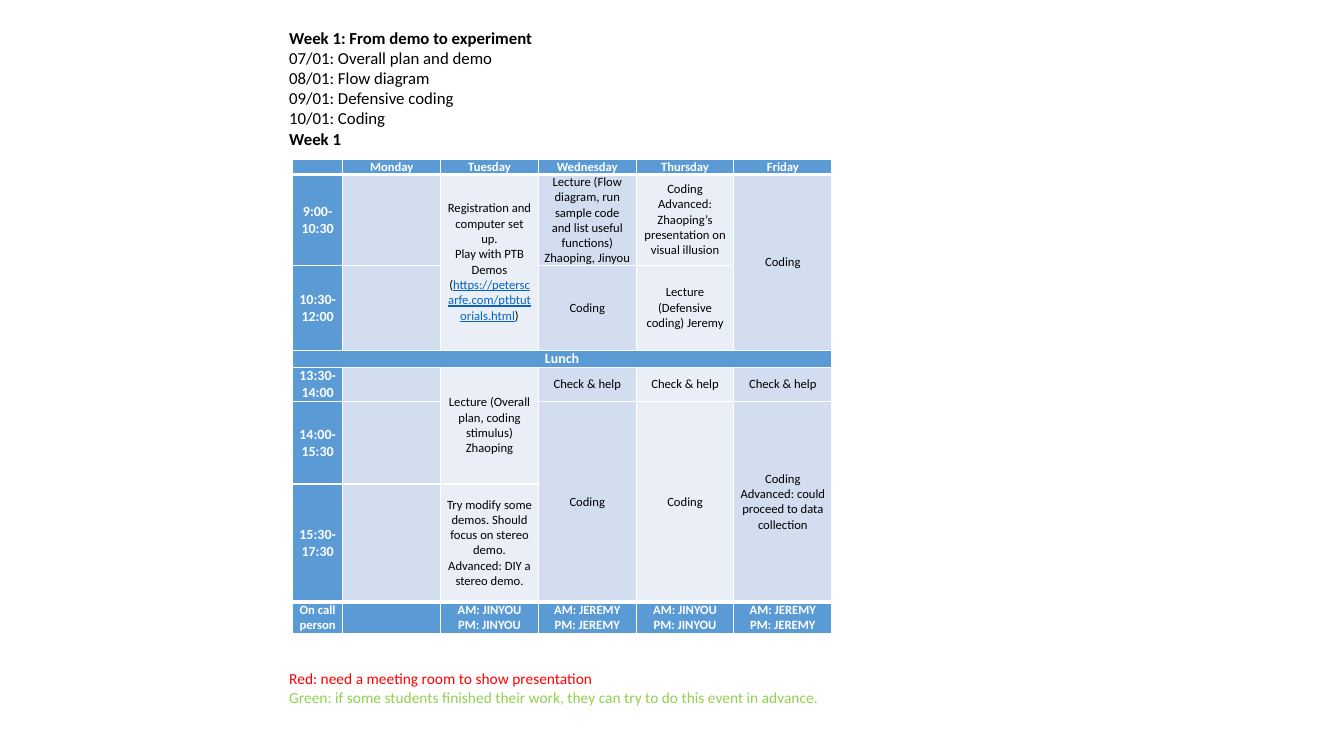
from pptx import Presentation
from pptx.dml.color import RGBColor
from pptx.enum.text import MSO_ANCHOR, MSO_AUTO_SIZE, PP_ALIGN
from pptx.oxml.xmlchemy import OxmlElement
from pptx.util import Inches, Pt

MIDDLE = MSO_ANCHOR.MIDDLE
GROW = MSO_AUTO_SIZE.SHAPE_TO_FIT_TEXT
CENTER = PP_ALIGN.CENTER

FONT = "Calibri"
COLORS = {
    "text": "000000", "white": "FFFFFF", "header": "5B9BD5",
    "odd": "D2DEEF", "even": "EAEFF7", "link": "0563C1",
    "red": "FF0000", "green": "92D050",
}

# Text around the timetable: wording, size, colour, bold, space before
NOTES = [
    ("Week 1: From demo to experiment", 12, "text", True, 0),
    ("07/01: Overall plan and demo", 12, "text", False, 0),
    ("08/01: Flow diagram", 12, "text", False, 0),
    ("09/01: Defensive coding", 12, "text", False, 0),
    ("10/01: Coding", 12, "text", False, 0),
    ("Week 1", 12, "text", True, 0),
    ("Red: need a meeting room to show presentation", 11, "red", False, 372),
    ("Green: if some students finished their work, they can try to do this "
     "event in advance.", 11, "green", False, 0),
]

# Timetable: each cell is a list of paragraphs, a paragraph is a list of spans
LINK = "https://peterscarfe.com/ptbtutorials.html"
EMPTY = []
CODING = [["Coding"]]
CHECK = [["Check & help"]]
JINYOU = [["AM: JINYOU"], ["PM: JINYOU"]]
JEREMY = [["AM: JEREMY"], ["PM: JEREMY"]]
ROWS = [
    [EMPTY, [["Monday"]], [["Tuesday"]], [["Wednesday"]], [["Thursday"]],
     [["Friday"]]],
    [[["9:00-10:30"]], EMPTY,
     [["Registration and computer set up."],
      ["Play with PTB Demos (", LINK, ")"]],
     [["Lecture (Flow diagram, run sample code and list useful functions) "
       "Zhaoping, Jinyou"]],
     [["Coding"], ["Advanced: Zhaoping’s presentation on visual illusion"]],
     CODING],
    [[["10:30-12:00"]], EMPTY, EMPTY, CODING,
     [["Lecture (Defensive coding) Jeremy"]], EMPTY],
    [[["Lunch"]]] + [EMPTY] * 5,
    [[["13:30-14:00"]], EMPTY,
     [["Lecture (Overall plan, coding stimulus)"], ["Zhaoping"]],
     CHECK, CHECK, CHECK],
    [[["14:00-15:30"]], EMPTY, EMPTY, CODING, CODING,
     [["Coding"], ["Advanced: could proceed to data collection"]]],
    [[["15:30-17:30"]], EMPTY,
     [["Try modify some demos. Should focus on stereo demo. "
       "Advanced: DIY a stereo demo."]], EMPTY, EMPTY, EMPTY],
    [[["On call person"]], EMPTY, JINYOU, JEREMY, JINYOU, JEREMY],
]
COLUMN_WIDTHS = [0.5] + [0.97] * 5
ROW_HEIGHTS = [0.15, 0.88, 0.84, 0.17, 0.34, 0.82, 1.17, 0.31]
LUNCH, LAST = 3, len(ROWS) - 1
# First and last cell of each merged block, as (row, column)
MERGES = [((1, 2), (2, 2)), ((1, 5), (2, 5)), ((LUNCH, 0), (LUNCH, 5)),
          ((4, 2), (5, 2)), ((5, 3), (6, 3)), ((5, 4), (6, 4)),
          ((5, 5), (6, 5))]


def rgb(name):
    return RGBColor.from_string(COLORS[name])


def add_span(para, text, size, color, bold=False, underline=False):
    span = para.add_run()
    span.text = text
    font = span.font
    font.name, font.size, font.bold = FONT, Pt(size), bold
    font.underline = underline
    font.color.rgb = rgb(color)


def next_para(frame, index):
    return frame.paragraphs[0] if index == 0 else frame.add_paragraph()


def add_notes(page):
    box = page.shapes.add_textbox(Inches(2.77), Inches(0.23),
                                  Inches(5.49), Inches(6.82))
    frame = box.text_frame
    frame.word_wrap = False
    frame.auto_size = GROW
    frame.vertical_anchor = MIDDLE
    for index, (text, size, color, bold, gap) in enumerate(NOTES):
        para = next_para(frame, index)
        para.space_before = Pt(gap)
        add_span(para, text, size, color, bold)


def set_borders(cell, top, bottom):
    """White borders; top and bottom widths are in points."""
    props = cell._tc.get_or_add_tcPr()
    for tag, width in (("L", 1), ("R", 1), ("T", top), ("B", bottom)):
        line = OxmlElement(f"a:ln{tag}")
        line.set("w", str(Pt(width)))
        fill = OxmlElement("a:solidFill")
        color = OxmlElement("a:srgbClr")
        color.set("val", COLORS["white"])
        fill.append(color)
        line.append(fill)
        props.append(line)


def fill_text(cell, paragraphs, size, color, bold):
    frame = cell.text_frame
    if not paragraphs:  # a small empty line keeps the row low
        end = OxmlElement("a:endParaRPr")
        end.set("sz", str(size * 100))
        frame.paragraphs[0]._p.append(end)
    for index, spans in enumerate(paragraphs):
        para = next_para(frame, index)
        para.alignment = CENTER
        for text in spans:
            is_link = text == LINK
            add_span(para, text, size, "link" if is_link else color,
                     bold, is_link)


def style_cell(cell, row, column, paragraphs):
    is_header = column == 0 or row in (0, LUNCH, LAST)
    is_time = column == 0 and 0 < row < LAST
    top = 3 if row in (1, LAST) else 1
    bottom = 3 if row in (0, LAST - 1) else 1
    set_borders(cell, top, bottom)
    band = "odd" if column % 2 else "even"
    cell.fill.solid()
    cell.fill.fore_color.rgb = rgb("header" if is_header else band)
    cell.vertical_anchor = MIDDLE
    cell.margin_left = cell.margin_right = Inches(0.06)
    cell.margin_top = cell.margin_bottom = Inches(0)
    fill_text(cell, paragraphs, 10 if is_time else 9,
              "white" if is_header else "text", is_header)


def add_timetable(page):
    frame = page.shapes.add_table(
        len(ROWS), len(COLUMN_WIDTHS), Inches(2.9), Inches(1.58),
        Inches(sum(COLUMN_WIDTHS)), Inches(sum(ROW_HEIGHTS)))
    table = frame.table
    table.first_row = table.horz_banding = False
    for column, width in zip(table.columns, COLUMN_WIDTHS):
        column.width = Inches(width)
    for row, height in zip(table.rows, ROW_HEIGHTS):
        row.height = Inches(height)
    for row, cells in enumerate(ROWS):
        for column, paragraphs in enumerate(cells):
            style_cell(table.cell(row, column), row, column, paragraphs)
    for first, last in MERGES:
        table.cell(*first).merge(table.cell(*last))


def main():
    deck = Presentation()
    deck.slide_width, deck.slide_height = Inches(13.33), Inches(7.5)
    page = deck.slides.add_slide(deck.slide_layouts[6])
    add_notes(page)
    add_timetable(page)
    deck.save("out.pptx")


if __name__ == "__main__":
    main()
